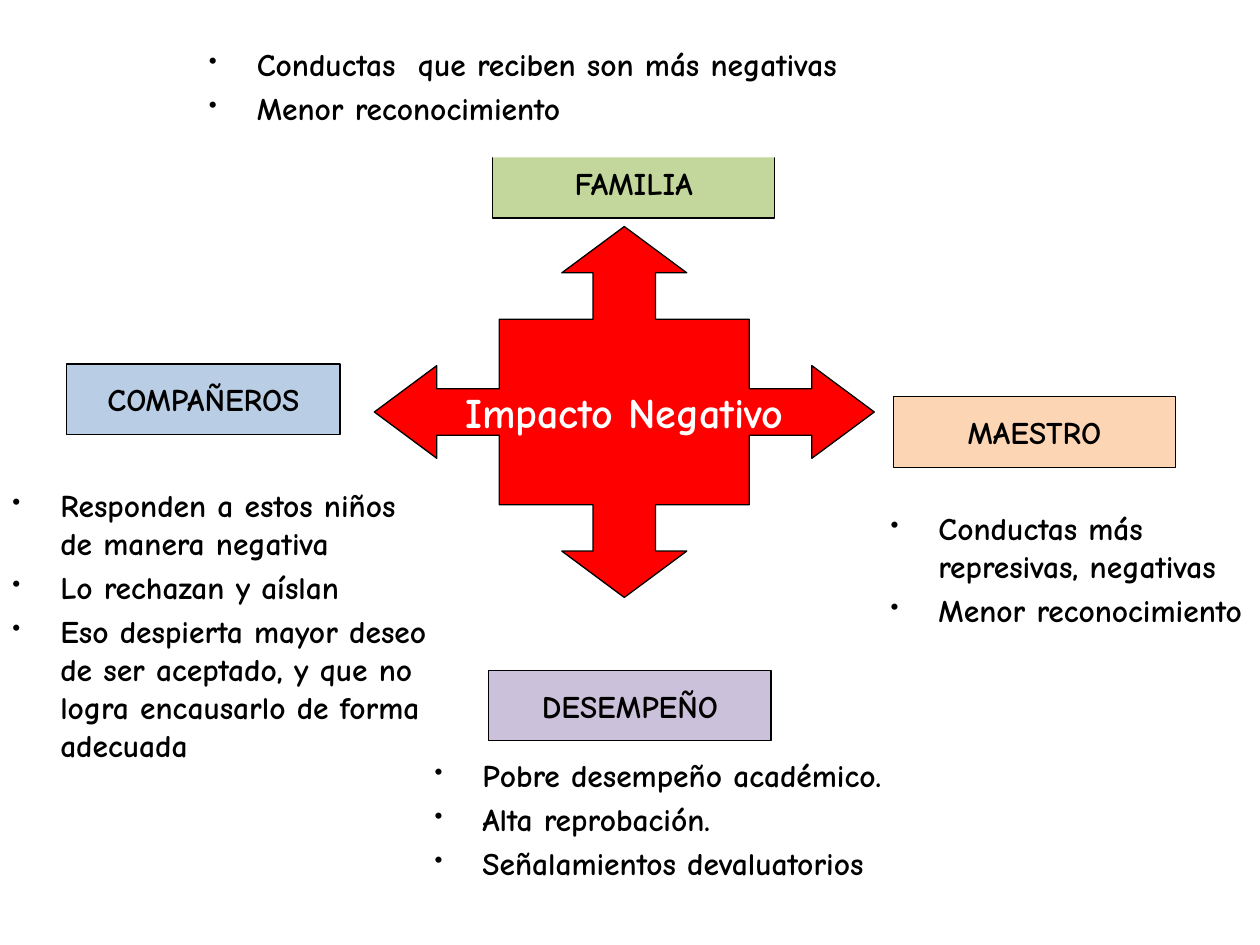
"""Build a slide on the negative impact seen in family, peers, teacher and performance."""
import pptx
import pptx.dml.color
import pptx.enum.shapes
import pptx.enum.text
import pptx.oxml
import pptx.oxml.ns
import pptx.util

RGB = pptx.dml.color.RGBColor
PP_ALIGN = pptx.enum.text.PP_ALIGN
ANCHOR = pptx.enum.text.MSO_ANCHOR
RECT = pptx.enum.shapes.MSO_SHAPE.RECTANGLE

BLACK = RGB(0x00, 0x00, 0x00)
WHITE = RGB(0xFF, 0xFF, 0xFF)
RED = RGB(0xFF, 0x00, 0x00)
BLUE = RGB(0xB9, 0xCD, 0xE5)
ORANGE = RGB(0xFC, 0xD5, 0xB5)
PURPLE = RGB(0xCC, 0xC1, 0xDA)
GREEN = RGB(0xC3, 0xD6, 0x9B)

COLS, ROWS = 100, 75
CELL = pptx.util.Inches(0.1)
LABEL_HEIGHT = 5.6
INDENT = pptx.util.Inches(0.38)
FONT = {"name": "Comic Neue", "size": pptx.util.Pt(18), "bold": True}
LABEL_FRAME = {"word_wrap": False, "vertical_anchor": ANCHOR.MIDDLE}
LIST_FRAME = {"word_wrap": True, "vertical_anchor": ANCHOR.TOP}
CENTRED = {"alignment": PP_ALIGN.CENTER}
LISTED = {"alignment": PP_ALIGN.LEFT, "space_before": pptx.util.Pt(3.6)}

ARM = [(-4, -4), (-1, -4), (-1, -6), (-2, -6), (0, -8), (2, -6), (1, -6), (1, -4)]
ARROW_CENTRE = (49.55, 32.7)
ARROW_UNIT = (2.48, 1.84)

TOPICS = [
    ("COMPAÑEROS", BLUE, (5.3, 28.9, 21.7), (0, 38.1, 35.2, 23.4),
     ["Responden a estos niños de manera negativa",
      "Lo rechazan y aíslan",
      "Eso despierta mayor deseo de ser aceptado, y que no logra "
      "encausarlo de forma adecuada"]),
    ("MAESTRO", ORANGE, (70.9, 31.5, 22.4), (69.7, 39.9, 30.3, 15.7),
     ["Conductas más represivas, negativas", "Menor reconocimiento"]),
    ("DESEMPEÑO", PURPLE, (38.8, 53.2, 22.4), (33.5, 59.5, 44.9, 13.1),
     ["Pobre desempeño académico.", "Alta reprobación.",
      "Señalamientos devaluatorios"]),
    ("FAMILIA", GREEN, (39.1, 11.7, 22.4), (15.6, 3.1, 79.7, 9.4),
     ["Conductas  que reciben son más negativas", "Menor reconocimiento"]),
]


def cells(*counts):
    """Convert grid counts to lengths."""
    return [pptx.util.Emu(round(n * CELL)) for n in counts]


def apply(obj, values):
    """Set each attribute named in a dict of format values."""
    for name, value in values.items():
        setattr(obj, name, value)


def paint(sp, fill, line=BLACK):
    """Give a shape a flat fill and a thin line, or no line."""
    sp.shadow.inherit = False
    sp.fill.solid()
    sp.fill.fore_color.rgb = fill
    if line is None:
        sp.line.fill.background()
    else:
        sp.line.color.rgb = line
        sp.line.width = pptx.util.Pt(0.75)


def write(p, text, color=BLACK, **changes):
    """Put one formatted run in a paragraph."""
    r = p.add_run()
    r.text = text
    apply(r.font, {**FONT, **changes})
    r.font.color.rgb = color


def add_caption(sp, text, **style):
    """Centre a single unwrapped line in a shape."""
    tf = sp.text_frame
    apply(tf, LABEL_FRAME)
    apply(tf.paragraphs[0], CENTRED)
    write(tf.paragraphs[0], text, **style)


def add_bullet(p):
    """Give a paragraph a hanging black bullet."""
    pPr = p._p.get_or_add_pPr()
    pPr.set("marL", str(INDENT))
    pPr.set("indent", str(-INDENT))
    ns = pptx.oxml.ns.nsdecls("a")
    for tag in (f'<a:buClr {ns}><a:srgbClr val="{BLACK}"/></a:buClr>',
                f'<a:buSzPct {ns} val="75000"/>',
                f'<a:buChar {ns} char="•"/>'):
        pPr.append(pptx.oxml.parse_xml(tag))


def add_label(s, text, fill, left, top, width):
    """Add a coloured topic label."""
    sp = s.shapes.add_shape(RECT, *cells(left, top, width, LABEL_HEIGHT))
    paint(sp, fill)
    add_caption(sp, text)


def add_list(s, items, box):
    """Add a bulleted list on a white ground."""
    sp = s.shapes.add_shape(RECT, *cells(*box))
    paint(sp, WHITE, None)
    tf = sp.text_frame
    apply(tf, LIST_FRAME)
    for i, item in enumerate(items):
        p = tf.add_paragraph() if i else tf.paragraphs[0]
        apply(p, LISTED)
        add_bullet(p)
        write(p, item)


def add_arrow(s, text):
    """Add the central four-way arrow by turning one arm about its centre."""
    points, arm = [], ARM
    for _ in range(4):
        points += arm
        arm = [(-y, x) for x, y in arm]
    builder = s.shapes.build_freeform(*points[0], scale=tuple(cells(*ARROW_UNIT)))
    builder.add_line_segments(points[1:], close=True)
    sp = builder.convert_to_shape(*cells(*ARROW_CENTRE))
    paint(sp, RED)
    add_caption(sp, text, color=WHITE, size=pptx.util.Pt(24))


def main():
    """Build and save the slide."""
    prs = pptx.Presentation()
    prs.slide_width, prs.slide_height = cells(COLS, ROWS)
    s = prs.slides.add_slide(prs.slide_layouts[6])
    for title, fill, label, box, items in TOPICS:
        add_label(s, title, fill, *label)
        add_list(s, items, box)
    add_arrow(s, "Impacto Negativo")
    prs.save("out.pptx")


if __name__ == "__main__":
    main()
